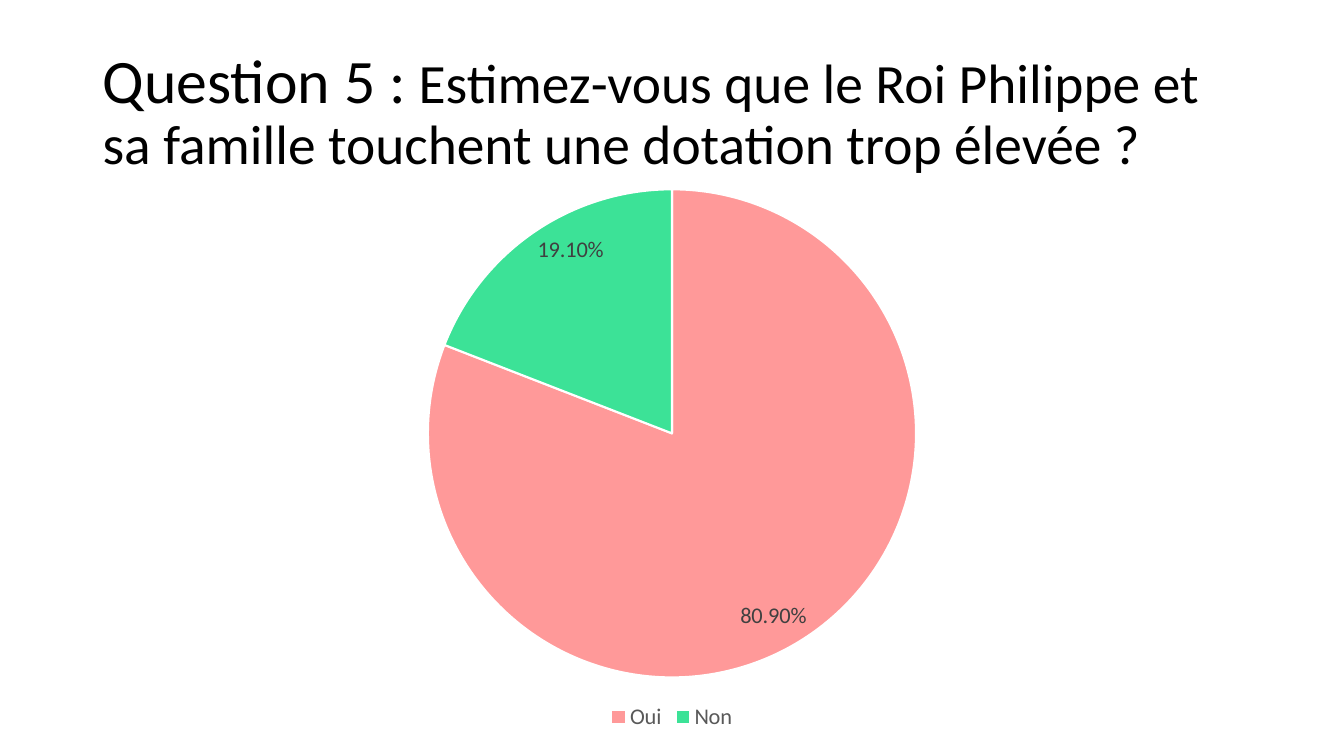
from pptx import Presentation
from pptx.chart.data import CategoryChartData
from pptx.dml.color import RGBColor
from pptx.enum.chart import XL_CHART_TYPE as ChartType
from pptx.enum.chart import XL_LABEL_POSITION as LabelPosition
from pptx.enum.chart import XL_LEGEND_POSITION as LegendPosition
from pptx.enum.text import MSO_ANCHOR, MSO_AUTO_SIZE, PP_ALIGN
from pptx.util import Cm, Pt

FONT = "Calibri"
QUESTION = [
    ("Question 5 :", 44.1),
    (" Estimez-vous que le Roi Philippe et sa famille touchent "
     "une dotation trop élevée ?", 39.6),
]
ANSWERS = [("Oui", 0.809, "FF9999"), ("Non", 0.191, "3CE297")]

SLIDE_WIDTH, SLIDE_HEIGHT = Cm(33.87), Cm(19.05)
MARGIN = Cm(2.33)
CONTENT_WIDTH = SLIDE_WIDTH - 2 * MARGIN


def rgb(color):
    return RGBColor.from_string(color)


def style_font(font, size, color):
    font.name = FONT
    font.size = Pt(size)
    font.color.rgb = rgb(color)


def add_question(slide):
    question = slide.shapes.title
    question.left, question.top = MARGIN, Cm(1.01)
    question.width, question.height = CONTENT_WIDTH, Cm(3.68)
    frame = question.text_frame
    frame.word_wrap = True
    frame.auto_size = MSO_AUTO_SIZE.NONE
    frame.vertical_anchor = MSO_ANCHOR.MIDDLE
    paragraph = frame.paragraphs[0]
    paragraph.alignment = PP_ALIGN.LEFT
    paragraph.line_spacing = 0.9
    for words, size in QUESTION:
        run = paragraph.add_run()
        run.text = words
        style_font(run.font, size, "000000")


def add_answers(slide):
    data = CategoryChartData(number_format="0.00%")
    data.categories = [answer for answer, _, _ in ANSWERS]
    data.add_series("Series 1", [share for _, share, _ in ANSWERS])
    chart = slide.shapes.add_chart(
        ChartType.PIE, MARGIN, Cm(4.42), CONTENT_WIDTH, Cm(14.1), data
    ).chart
    style_font(chart.font, 10, "000000")
    chart.has_title = False

    chart.has_legend = True
    chart.legend.position = LegendPosition.BOTTOM
    chart.legend.include_in_layout = False
    style_font(chart.legend.font, 16, "595959")

    pie = chart.plots[0]
    pie.vary_by_categories = True
    for index, (_, _, color) in enumerate(ANSWERS):
        slice_format = pie.series[0].points[index].format
        slice_format.fill.solid()
        slice_format.fill.fore_color.rgb = rgb(color)
        slice_format.line.color.rgb = rgb("FFFFFF")
        slice_format.line.width = Pt(1.5)

    labels = pie.series[0].data_labels
    labels.show_value = True
    labels.show_percentage = False
    labels.number_format = "0.00%"
    labels.number_format_is_linked = False
    labels.position = LabelPosition.INSIDE_END
    style_font(labels.font, 16, "404040")


def main():
    presentation = Presentation()
    presentation.slide_width = SLIDE_WIDTH
    presentation.slide_height = SLIDE_HEIGHT
    slide = presentation.slides.add_slide(presentation.slide_layouts[5])
    add_question(slide)
    add_answers(slide)
    presentation.save("out.pptx")


if __name__ == "__main__":
    main()
